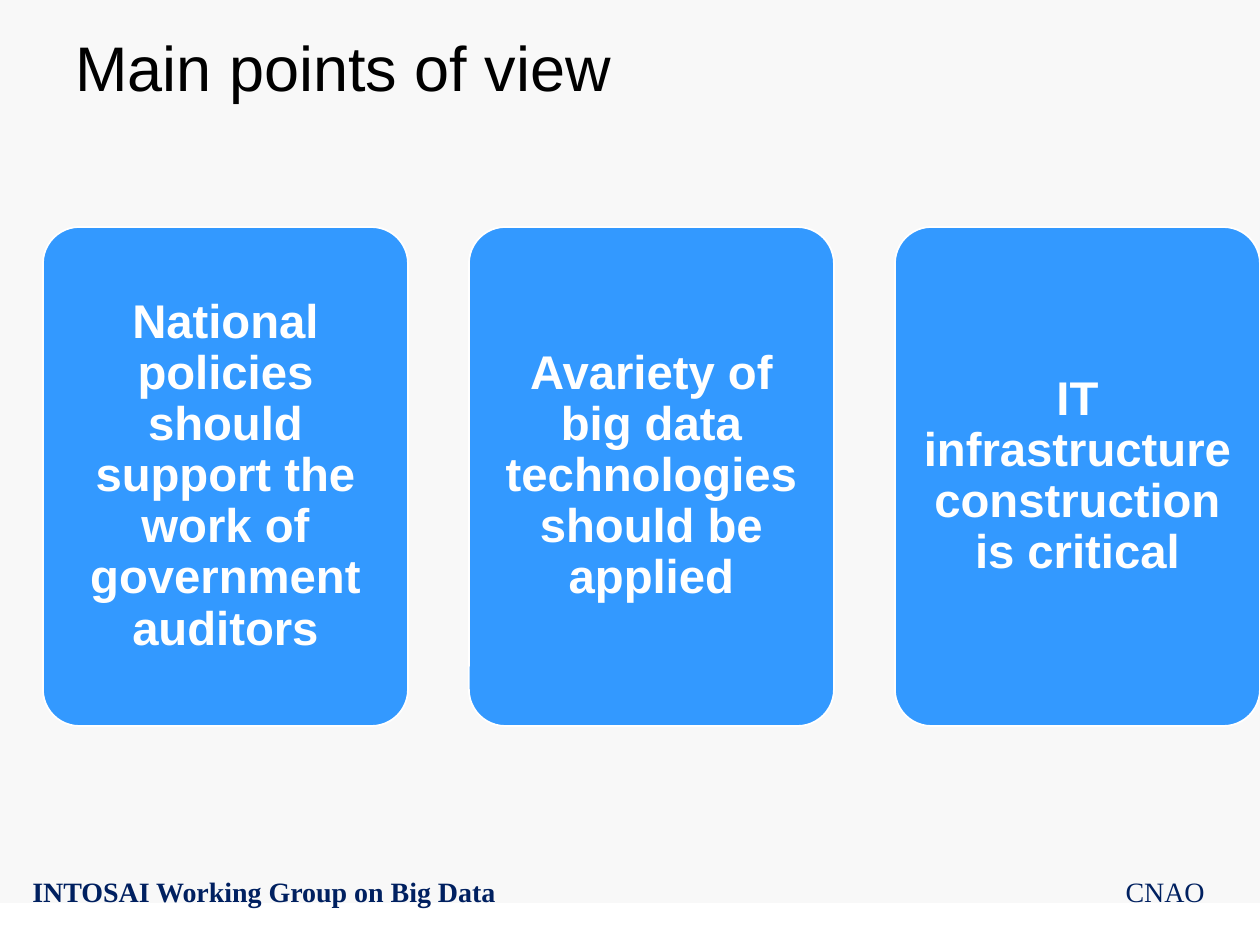
"""Build the "Main points of view" slide with three equal cards."""
from pptx import Presentation
from pptx.dml.color import RGBColor
from pptx.enum.shapes import MSO_SHAPE
from pptx.enum.text import MSO_ANCHOR, PP_ALIGN
from pptx.util import Pt

BLACK = RGBColor(0x00, 0x00, 0x00)
WHITE = RGBColor(0xFF, 0xFF, 0xFF)
NAVY = RGBColor(0x00, 0x20, 0x60)
BLUE = RGBColor(0x33, 0x99, 0xFF)
GREY_TOP = RGBColor(0xF8, 0xF8, 0xF8)
GREY_BOTTOM = RGBColor(0xFB, 0xFB, 0xFB)

SANS, SERIF = "Arial", "Times New Roman"
W, H = 1260, 945
BACKDROP_H = 903
CARD_X, CARD_Y, CARD_W, CARD_H, CARD_PITCH = 43, 227, 365, 499, 426
CARD_INSET = 14

# text, box, font, size, colour, bold, alignment, anchor
LABELS = [
    ("INTOSAI Working Group on Big Data", (20, 868, 494, 50),
     SERIF, 16, NAVY, True, PP_ALIGN.LEFT, MSO_ANCHOR.TOP),
    ("CNAO", (924, 868, 293, 51),
     SERIF, 16, NAVY, False, PP_ALIGN.RIGHT, MSO_ANCHOR.TOP),
    ("Main points of view", (63, 26, 1134, 81),
     SANS, 36, BLACK, False, PP_ALIGN.LEFT, MSO_ANCHOR.MIDDLE),
]
POINTS = [
    "National policies should support the work of government auditors",
    "Avariety of big data technologies should be applied",
    "IT infrastructure construction is critical",
]


def px(n):
    return round(n * 914400 / 126)


def box(*lengths):
    return [px(n) for n in lengths]


def write(sp, text, font, size, color, bold, align, anchor):
    tf = sp.text_frame
    tf.text = text
    tf.word_wrap = True
    tf.vertical_anchor = anchor
    p = tf.paragraphs[0]
    p.alignment = align
    f = p.runs[0].font
    f.name, f.size, f.bold = font, Pt(size), bold
    f.color.rgb = color
    return tf


def add_backdrop(s):
    sp = s.shapes.add_shape(MSO_SHAPE.RECTANGLE, *box(0, 0, W, BACKDROP_H))
    sp.shadow.inherit = False
    sp.line.fill.background()
    sp.fill.gradient()
    sp.fill.gradient_angle = 270
    for stop, color in zip(sp.fill.gradient_stops, (GREY_TOP, GREY_BOTTOM)):
        stop.color.rgb = color


def add_card(s, i, text):
    sp = s.shapes.add_shape(
        MSO_SHAPE.ROUNDED_RECTANGLE,
        *box(CARD_X + i * CARD_PITCH, CARD_Y, CARD_W, CARD_H))
    sp.adjustments[0] = 0.1
    sp.shadow.inherit = False
    sp.fill.solid()
    sp.fill.fore_color.rgb = BLUE
    sp.line.color.rgb = WHITE
    sp.line.width = Pt(1)
    tf = write(sp, text, SANS, 27, WHITE, True,
               PP_ALIGN.CENTER, MSO_ANCHOR.MIDDLE)
    tf.margin_left = tf.margin_right = px(CARD_INSET)
    tf.margin_top = tf.margin_bottom = px(CARD_INSET)
    tf.paragraphs[0].line_spacing = 0.9


def main():
    prs = Presentation()
    prs.slide_width, prs.slide_height = box(W, H)
    s = prs.slides.add_slide(prs.slide_layouts[6])
    add_backdrop(s)
    for text, place, *style in LABELS:
        write(s.shapes.add_textbox(*box(*place)), text, *style)
    for i, text in enumerate(POINTS):
        add_card(s, i, text)
    prs.save("out.pptx")


if __name__ == "__main__":
    main()
